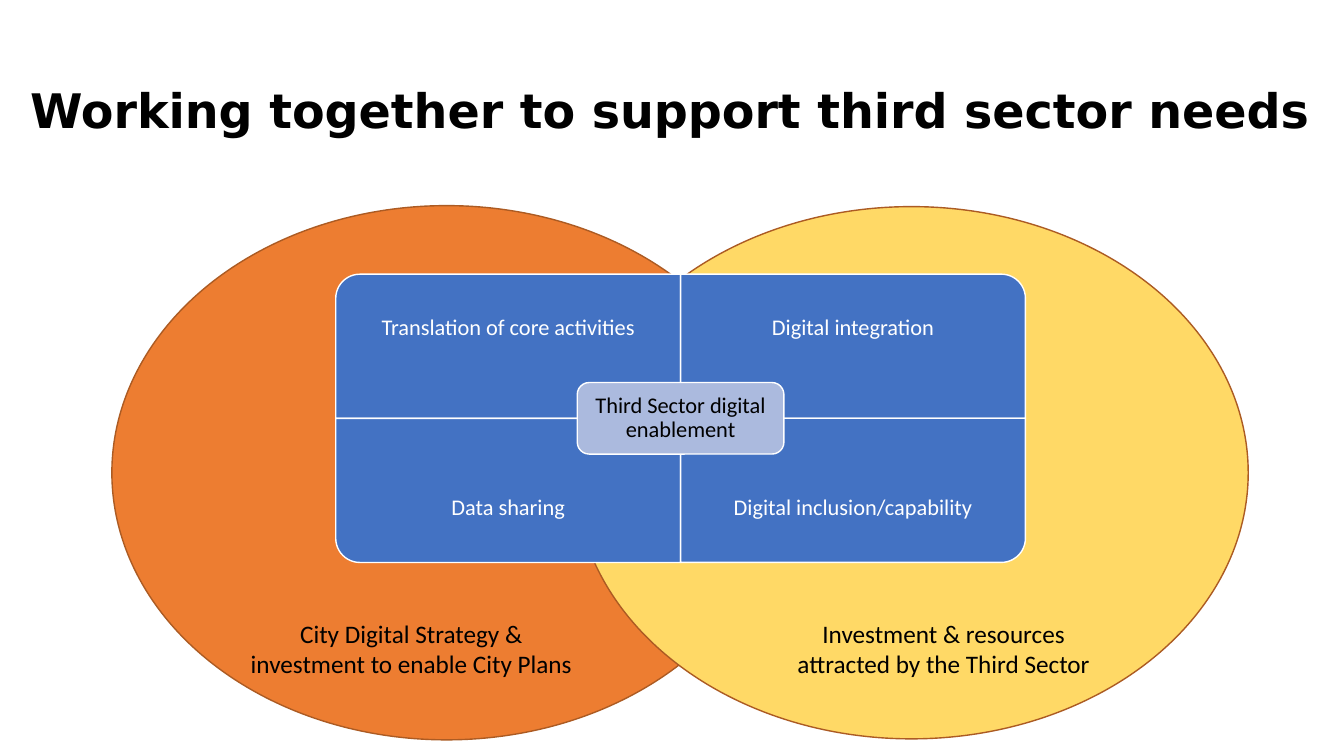
from dataclasses import dataclass

from pptx import Presentation
from pptx.dml.color import RGBColor
from pptx.enum.shapes import MSO_SHAPE
from pptx.enum.text import MSO_ANCHOR, MSO_AUTO_SIZE, PP_ALIGN
from pptx.util import Inches, Pt

TITLE = "Working together to support third sector needs"
CIRCLES = [
    ((1.11, 2.04, 6.64, 5.3), "orange"),
    ((5.7, 2.05, 6.68, 5.28), "yellow"),
]
QUADRANTS = [
    ("Translation of core activities", 0, 0, 270),
    ("Digital integration", 0, 1, 0),
    ("Data sharing", 1, 0, 180),
    ("Digital inclusion/capability", 1, 1, 90),
]
CORE = "Third Sector digital enablement"
CAPTIONS = [
    ("City Digital Strategy & investment to enable City Plans", 2.35),
    ("Investment & resources attracted by the Third Sector", 7.63),
]


@dataclass(frozen=True)
class Theme:
    orange: str = "ED7D31"
    yellow: str = "FFD966"
    rim: str = "AC5B23"
    blue: str = "4372C3"
    pale: str = "ABBADE"
    white: str = "FFFFFF"
    black: str = "000000"
    title_font: str = "DejaVu Sans"
    body_font: str = "Calibri"
    title_size: int = 34
    label_size: int = 16
    caption_size: int = 18


THEME = Theme()
CENTER_X, CENTER_Y = 6.75, 4.15
CELL_W, CELL_H = 3.42, 1.43
LABEL_H = 1.07
CORE_W, CORE_H = 2.05, 0.71
CORNER = 0.167


def write(box, text, size, color, font=THEME.body_font, bold=False,
          align=PP_ALIGN.CENTER, spacing=0.9, margins=(0.1, 0.05),
          anchor=MSO_ANCHOR.MIDDLE):
    frame = box.text_frame
    frame.word_wrap = True
    frame.auto_size = MSO_AUTO_SIZE.NONE
    frame.vertical_anchor = anchor
    frame.margin_left = frame.margin_right = Inches(margins[0])
    frame.margin_top = frame.margin_bottom = Inches(margins[1])
    para = frame.paragraphs[0]
    para.alignment = align
    para.line_spacing = spacing
    span = para.add_run()
    span.text = text
    span.font.name = font
    span.font.size = Pt(size)
    span.font.bold = bold
    span.font.color.rgb = RGBColor.from_string(color)


def add_panel(page, kind, area, fill, line):
    panel = page.shapes.add_shape(kind, *map(Inches, area))
    panel.shadow.inherit = False
    panel.fill.solid()
    panel.fill.fore_color.rgb = RGBColor.from_string(fill)
    panel.line.color.rgb = RGBColor.from_string(line)
    panel.line.width = Pt(1)
    return panel


def add_label(page, area, text, size, color, **style):
    box = page.shapes.add_textbox(*map(Inches, area))
    write(box, text, size, color, **style)


def add_quadrant(page, text, row, column, turn):
    left = CENTER_X + (column - 1) * CELL_W
    top = CENTER_Y + (row - 1) * CELL_H
    width, height = (CELL_H, CELL_W) if turn % 180 else (CELL_W, CELL_H)
    area = (left + (CELL_W - width) / 2, top + (CELL_H - height) / 2, width, height)
    panel = add_panel(page, MSO_SHAPE.ROUND_1_RECTANGLE, area, THEME.blue, THEME.white)
    panel.adjustments[0] = CORNER
    panel.rotation = turn
    label_top = top + row * (CELL_H - LABEL_H)
    add_label(page, (left, label_top, CELL_W, LABEL_H), text,
              THEME.label_size, THEME.white, margins=(0.12, 0.12))


def main():
    deck = Presentation()
    deck.slide_width, deck.slide_height = Inches(13.33), Inches(7.5)
    page = deck.slides.add_slide(deck.slide_layouts[5])

    for area, color in CIRCLES:
        add_panel(page, MSO_SHAPE.OVAL, area, getattr(THEME, color), THEME.rim)

    title = page.shapes.title
    title.left, title.top, title.width, title.height = map(Inches, (0.2, 0.4, 12.96, 1.45))
    write(title, TITLE, THEME.title_size, THEME.black, font=THEME.title_font,
          bold=True, align=PP_ALIGN.LEFT)

    for quadrant in QUADRANTS:
        add_quadrant(page, *quadrant)

    core_area = (CENTER_X - CORE_W / 2, CENTER_Y - CORE_H / 2, CORE_W, CORE_H)
    core = add_panel(page, MSO_SHAPE.ROUNDED_RECTANGLE, core_area, THEME.pale, THEME.white)
    core.adjustments[0] = CORNER
    write(core, CORE, THEME.label_size, THEME.black, margins=(0.1, 0.1))

    for text, left in CAPTIONS:
        add_label(page, (left, 6.08, 3.46, 0.71), text, THEME.caption_size,
                  THEME.black, spacing=1.0, anchor=MSO_ANCHOR.TOP)

    deck.save("out.pptx")


if __name__ == "__main__":
    main()
